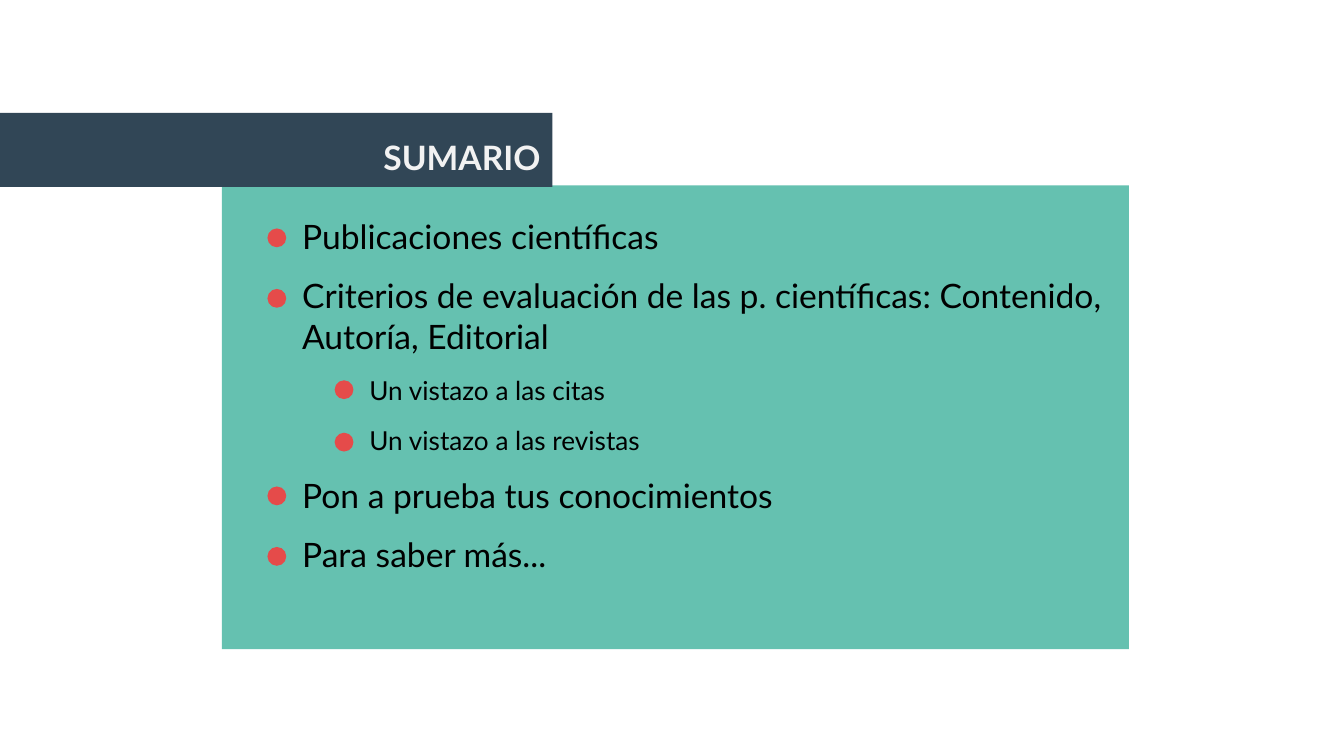
"""Build the "Sumario" slide: a title band over a panel with a dotted outline."""
from lxml.etree import SubElement
from pptx import Presentation
from pptx.dml.color import RGBColor
from pptx.enum.shapes import MSO_SHAPE
from pptx.enum.text import MSO_ANCHOR, PP_ALIGN
from pptx.oxml.ns import qn
from pptx.util import Inches, Pt


def add_filled(page, kind, left, top, width, height, color):
    shape = page.shapes.add_shape(
        kind, Inches(left), Inches(top), Inches(width), Inches(height))
    shape.shadow.inherit = False
    shape.fill.solid()
    shape.fill.fore_color.rgb = RGBColor.from_string(color)
    shape.line.fill.background()


def add_text(page, left, top, width, height, lines, color):
    box = page.shapes.add_textbox(
        Inches(left), Inches(top), Inches(width), Inches(height))
    frame = box.text_frame
    frame.word_wrap = True
    frame.vertical_anchor = MSO_ANCHOR.TOP
    frame.margin_left = frame.margin_right = Inches(0.1)
    frame.margin_top = frame.margin_bottom = Inches(0.1)
    frame.text = "\n".join(text for text, size in lines)
    for para, (text, size) in zip(frame.paragraphs, lines):
        for span in para.runs:
            span.font.name = "Lato"
            span.font.size = Pt(size)
            span.font.color.rgb = RGBColor.from_string(color)
    return frame.paragraphs


deck = Presentation()
deck.slide_width = Inches(10)
deck.slide_height = Inches(10) * 9 // 16
page = deck.slides.add_slide(deck.slide_layouts[6])

add_filled(page, MSO_SHAPE.RECTANGLE, 1.65, 1.38, 6.75, 3.45, "65C1B0")
add_filled(page, MSO_SHAPE.RECTANGLE, 0, 0.84, 4.11, 0.55, "314656")

title = add_text(page, 1.8, 0.92, 2.32, 0.36, [("SUMARIO", 18)], "F2F2F2")[0]
title.alignment = PP_ALIGN.RIGHT
title.runs[0].font.bold = True

topics = [
    ("Publicaciones científicas", 18),
    ("Criterios de evaluación de las p. científicas: Contenido, Autoría, Editorial", 18),
    ("\tUn vistazo a las citas", 14),
    ("Un vistazo a las revistas", 14),
    ("Pon a prueba tus conocimientos", 18),
    ("Para saber más...", 18),
]
paras = add_text(page, 1.65, 1.51, 6.75, 3.31, topics, "000000")
for index, para in enumerate(paras):
    properties = para._p.get_or_add_pPr()
    properties.set("marL", str(Inches(0.5)))
    properties.set("indent", str(Inches(0.5 if index == 3 else 0)))
    if index > 0:
        para.space_before = Pt(10)
paras[-1].space_after = Pt(10)

tab_list = SubElement(paras[2]._p.get_or_add_pPr(), qn("a:tabLst"))
SubElement(tab_list, qn("a:tab"), pos=str(Inches(1.5)), algn="l")

dot_tops = [1.7, 2.15, 2.83, 3.22, 3.62, 4.07]
for (text, size), top in zip(topics, dot_tops):
    left = 1.99 if size == 18 else 2.49
    add_filled(page, MSO_SHAPE.OVAL, left, top, 0.14, 0.14, "E54B4A")

deck.save("out.pptx")
